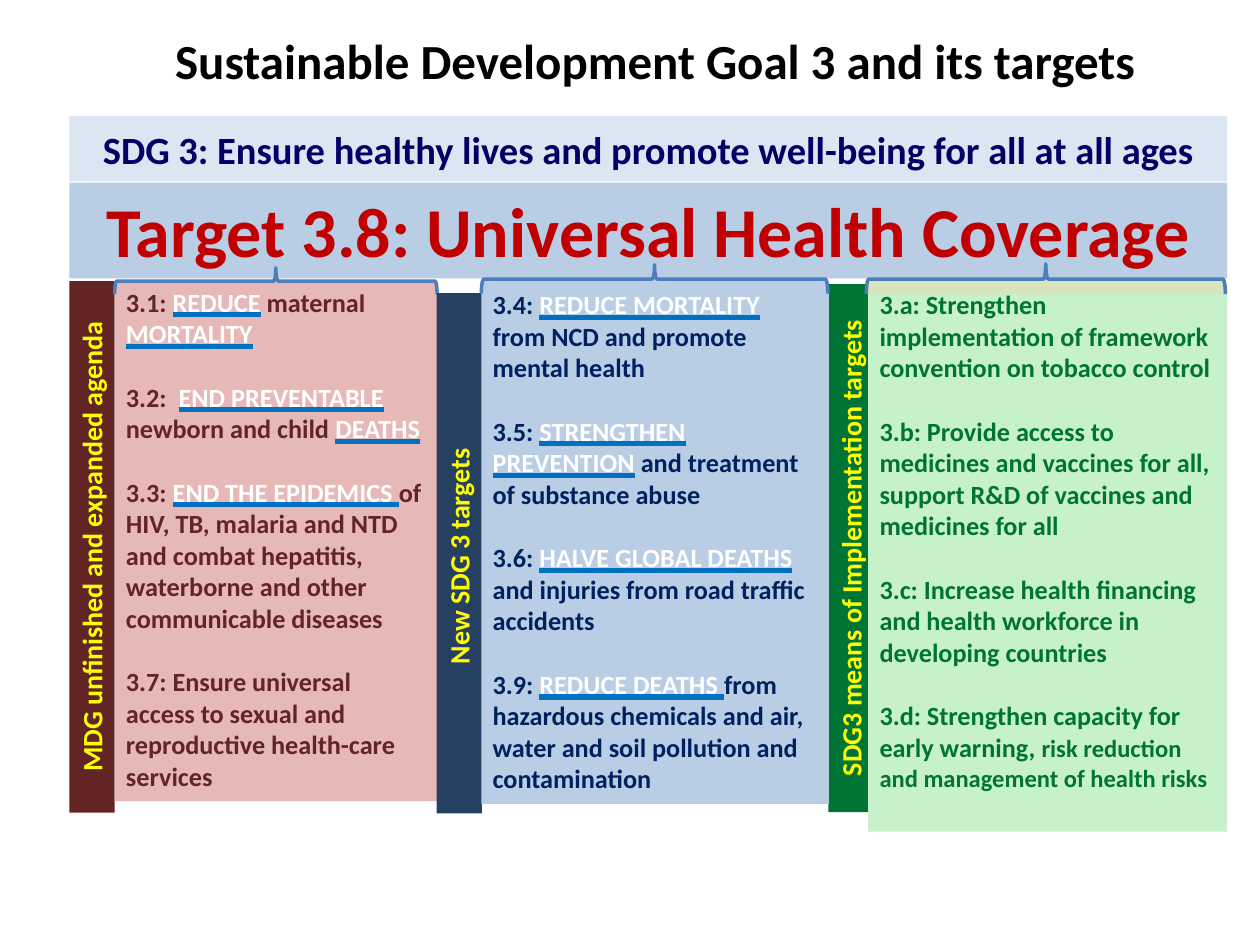
import pptx
import pptx.dml.color
import pptx.enum.shapes
import pptx.enum.text
import pptx.util
import lxml.etree

# The slide is a grid of 100 columns by 75 rows; boxes are left, top, width, height.
COLUMNS, ROWS = 100, 75
SLIDE_WIDTH, SLIDE_HEIGHT = pptx.util.Inches(10), pptx.util.Inches(7.5)
SHAPES = pptx.enum.shapes.MSO_SHAPE
ANCHORS = pptx.enum.text.MSO_ANCHOR
ALIGNMENTS = pptx.enum.text.PP_ALIGN
DRAWING = "http://schemas.openxmlformats.org/drawingml/2006/main"

COLOURS = {
    "black": "000000", "white": "FFFFFF", "yellow": "FFFF00",
    "navy": "000066", "red": "C00000", "underline": "0070C0", "brace": "4B7EBC",
    "pale blue": "DCE6F2", "light blue": "B9CDE5", "dark blue": "254061",
    "blue text": "002060", "pink": "E6B9B8", "maroon": "632523",
    "green": "007434", "light green": "C7F1CB", "olive": "D7E4BD",
}
HIGHLIGHT = {"colour": "white", "underline": pptx.enum.text.MSO_UNDERLINE.HEAVY_LINE}
SMALLER = {"size": 14}
GAP = 18.3  # one line of 15 point text

# Asterisks enclose the runs that take the accent format of their column.
TARGET_COLUMNS = [
    {
        "heading": "MDG unfinished and expanded agenda",
        "bar": (5.5, 22.3, 3.6, 42.2), "bar fill": "maroon",
        "panel": (9.1, 22.3, 25.6, 41.3), "panel fill": "pink",
        "brace": (9.1, 21.25, 25.6, 2.1), "brace fill": "pink",
        "text colour": "maroon", "accent": HIGHLIGHT,
        "targets": [
            "3.1: *REDUCE* maternal *MORTALITY*",
            "3.2:  *END PREVENTABLE *newborn and child *DEATHS*",
            "3.3: *END THE EPIDEMICS *of HIV, TB, malaria and NTD",
            "and combat hepatitis, waterborne and other communicable diseases",
            "3.7: Ensure universal access to sexual and reproductive health-care services",
        ],
    },
    {
        "heading": "SDG3 means of Implementation targets",
        "bar": (65.75, 22.55, 3.6, 41.9), "bar fill": "green",
        "panel": (68.9, 22.5, 28.5, 43.5), "panel fill": "light green",
        "brace": (68.75, 20.95, 28.5, 2.4), "brace fill": "olive",
        "text colour": "green", "accent": SMALLER,
        "targets": [
            "3.a: Strengthen implementation of framework convention on tobacco control",
            "3.b: Provide access to medicines and vaccines for all, "
            "support R&D of vaccines and medicines for all",
            "3.c: Increase health financing and health workforce in developing countries",
            "3.d: Strengthen capacity for early warning, "
            "*risk reduction and management of health risks*",
        ],
    },
    {
        "heading": "New SDG 3 targets ",
        "bar": (34.65, 23.25, 3.6, 41.3), "bar fill": "dark blue",
        "panel": (38.2, 22.5, 27.6, 41.3), "panel fill": "light blue",
        "brace": (38.2, 21, 27.5, 2.3), "brace fill": "light blue",
        "text colour": "blue text", "accent": HIGHLIGHT,
        "targets": [
            "3.4: *REDUCE MORTALITY *from NCD and promote mental health",
            "3.5: *STRENGTHEN PREVENTION* and treatment of substance abuse",
            "3.6: *HALVE GLOBAL DEATHS *and injuries from road traffic accidents",
            "3.9: *REDUCE DEATHS *from hazardous chemicals and air, "
            "water and soil pollution and contamination",
        ],
    },
]


def colour(name):
    return pptx.dml.color.RGBColor.from_string(COLOURS[name])


def place(box):
    left, top, width, height = box
    return (round(left * SLIDE_WIDTH / COLUMNS), round(top * SLIDE_HEIGHT / ROWS),
            round(width * SLIDE_WIDTH / COLUMNS), round(height * SLIDE_HEIGHT / ROWS))


def turned(box):
    """Return the unrotated box of a shape that fills box after a quarter turn."""
    left, top, width, height = box
    return (left + (width - height) / 2, top + (height - width) / 2, height, width)


def add_block(slide, kind, box, fill, rotation=0):
    shape = slide.shapes.add_shape(kind, *place(turned(box) if rotation else box))
    shape.rotation = rotation
    shape.shadow.inherit = False
    shape.fill.solid()
    shape.fill.fore_color.rgb = colour(fill)
    shape.line.fill.background()
    return shape


def prepare_frame(shape, **values):
    frame = shape.text_frame
    settings = {"word_wrap": True, "vertical_anchor": ANCHORS.TOP}
    for side in ("left", "right"):
        settings["margin_" + side] = pptx.util.Inches(0.09)
    for side in ("top", "bottom"):
        settings["margin_" + side] = pptx.util.Inches(0.04)
    for name, value in {**settings, **values}.items():
        setattr(frame, name, value)
    return frame


def add_run(paragraph, text, style):
    run = paragraph.add_run()
    run.text = text
    values = {"name": "Calibri", "bold": True, "size": pptx.util.Pt(style["size"]),
              "underline": style.get("underline")}
    for name, value in values.items():
        setattr(run.font, name, value)
    run.font.color.rgb = colour(style["colour"])
    if "underline" in style:
        colour_underline(run)


def colour_underline(run):
    properties = run.font._element
    fill = lxml.etree.Element(f"{{{DRAWING}}}uFill")
    solid = lxml.etree.SubElement(fill, f"{{{DRAWING}}}solidFill")
    lxml.etree.SubElement(solid, f"{{{DRAWING}}}srgbClr", val=COLOURS["underline"])
    properties.find(f"{{{DRAWING}}}solidFill").addnext(fill)


def add_label(shape, text, size, text_colour, alignment=ALIGNMENTS.CENTER, **values):
    paragraph = prepare_frame(shape, **values).paragraphs[0]
    paragraph.alignment = alignment
    add_run(paragraph, text, {"size": size, "colour": text_colour})


def add_targets(shape, targets, text_colour, accent):
    frame = prepare_frame(shape)
    base = {"size": 15, "colour": text_colour}
    for index, target in enumerate(targets):
        paragraph = frame.add_paragraph() if index else frame.paragraphs[0]
        paragraph.alignment = ALIGNMENTS.LEFT
        if index and target.startswith("3."):
            paragraph.space_before = pptx.util.Pt(GAP)
        for position, text in enumerate(target.split("*")):
            if text:
                add_run(paragraph, text, {**base, **accent} if position % 2 else base)


def add_target_column(slide, column):
    bar = add_block(slide, SHAPES.RECTANGLE, column["bar"], column["bar fill"], 270)
    add_label(bar, column["heading"], 16, "yellow")
    panel = add_block(slide, SHAPES.RECTANGLE, column["panel"], column["panel fill"])
    add_targets(panel, column["targets"], column["text colour"], column["accent"])
    brace = add_block(slide, SHAPES.RIGHT_BRACE, column["brace"], column["brace fill"], 270)
    brace.line.color.rgb = colour("brace")
    brace.line.width = pptx.util.Pt(2)


def main():
    presentation = pptx.Presentation()
    presentation.slide_width, presentation.slide_height = SLIDE_WIDTH, SLIDE_HEIGHT
    slide = presentation.slides.add_slide(presentation.slide_layouts[6])

    goal = add_block(slide, SHAPES.RECTANGLE, (5.5, 9.2, 91.9, 5.2), "pale blue")
    add_label(goal, "SDG 3: Ensure healthy lives and promote well-being for all at all ages",
              22, "navy", vertical_anchor=ANCHORS.MIDDLE)
    title = slide.shapes.add_textbox(*place((13, 2, 79.7, 5.6)))
    add_label(title, "Sustainable Development Goal 3 and its targets",
              28, "black", ALIGNMENTS.LEFT, word_wrap=False)
    coverage = add_block(slide, SHAPES.RECTANGLE, (5.5, 14.5, 91.9, 7.6), "light blue")
    add_label(coverage, "Target 3.8: Universal Health Coverage", 40, "red")

    for column in TARGET_COLUMNS:
        add_target_column(slide, column)
    presentation.save("out.pptx")


if __name__ == "__main__":
    main()
